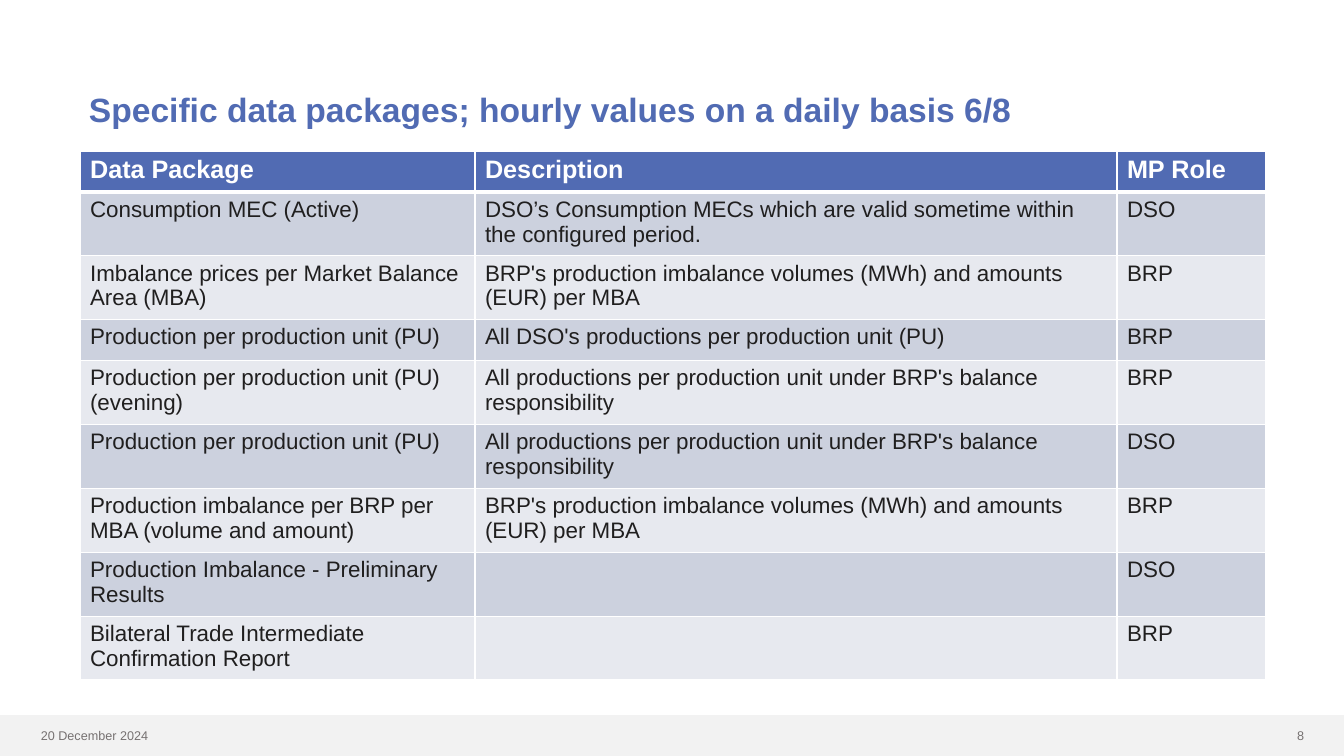
from lxml.etree import SubElement
from pptx import Presentation
from pptx.dml.color import RGBColor
from pptx.enum.shapes import MSO_SHAPE
from pptx.enum.text import MSO_ANCHOR, PP_ALIGN
from pptx.oxml.ns import qn
from pptx.util import Emu, Pt

EMU_PER_PX = 914400 / 100.8
FONT = "Arial"
COLORS = {
    "blue": "516BB3",
    "white": "FFFFFF",
    "ink": "201F1F",
    "band_dark": "CCD1DE",
    "band_light": "E7E9EF",
    "footer_band": "F2F2F2",
    "footer_text": "767171",
}

HEADINGS = ("Data Package", "Description", "MP Role")
PACKAGES = [
    ("Consumption MEC (Active)",
     "DSO’s Consumption MECs which are valid sometime within the configured period.", "DSO"),
    ("Imbalance prices per Market Balance Area (MBA)",
     "BRP's production imbalance volumes (MWh) and amounts (EUR) per MBA", "BRP"),
    ("Production per production unit (PU)",
     "All DSO's productions per production unit (PU)", "BRP"),
    ("Production per production unit (PU) (evening)",
     "All productions per production unit under BRP's balance responsibility", "BRP"),
    ("Production per production unit (PU)",
     "All productions per production unit under BRP's balance responsibility", "DSO"),
    ("Production imbalance per BRP per MBA (volume and amount)",
     "BRP's production imbalance volumes (MWh) and amounts (EUR) per MBA", "BRP"),
    ("Production Imbalance - Preliminary Results", "", "DSO"),
    ("Bilateral Trade Intermediate Confirmation Report", "", "BRP"),
]
COLUMN_WIDTHS = (395, 642, 149)
ROW_HEIGHT = 41


def px(length):
    return Emu(round(length * EMU_PER_PX))


def color(name):
    return RGBColor.from_string(COLORS[name])


def fill_solid(target, name):
    target.fill.solid()
    target.fill.fore_color.rgb = color(name)


def style_font(paragraph, size, color_name, bold=False):
    font = paragraph.font
    font.name, font.size, font.bold = FONT, Pt(size), bold
    font.color.rgb = color(color_name)


def add_text(slide, box, text, size, color_name, bold=False,
             align=PP_ALIGN.LEFT, anchor=MSO_ANCHOR.TOP, spacing=1.0):
    frame = slide.shapes.add_textbox(*map(px, box)).text_frame
    frame.word_wrap = True
    frame.vertical_anchor = anchor
    line = frame.paragraphs[0]
    line.text = text
    line.alignment = align
    line.line_spacing = spacing
    style_font(line, size, color_name, bold)


def add_footer_band(slide):
    band = slide.shapes.add_shape(MSO_SHAPE.RECTANGLE, *map(px, (0, 715, 1344, 41)))
    band.shadow.inherit = False
    fill_solid(band, "footer_band")
    band.line.fill.background()


def set_borders(cell, top, bottom):
    """Draw white cell borders; top and bottom are widths in points."""
    properties = cell._tc.get_or_add_tcPr()
    for side, width in (("L", 1), ("R", 1), ("T", top), ("B", bottom)):
        line = SubElement(properties, qn(f"a:ln{side}"), w=str(Pt(width)))
        solid = SubElement(line, qn("a:solidFill"))
        SubElement(solid, qn("a:srgbClr"), val=COLORS["white"])


def add_package_table(slide):
    rows = [HEADINGS, *PACKAGES]
    size = (sum(COLUMN_WIDTHS), ROW_HEIGHT * len(rows))
    table = slide.shapes.add_table(
        len(rows), len(HEADINGS), *map(px, (80, 151, *size))).table
    for column, width in zip(table.columns, COLUMN_WIDTHS):
        column.width = px(width)
    for index, texts in enumerate(rows):
        table.rows[index].height = px(ROW_HEIGHT)
        is_header = index == 0
        band = "blue" if is_header else ("band_light", "band_dark")[index % 2]
        for cell, text in zip(table.rows[index].cells, texts):
            set_borders(cell, top=3 if index == 1 else 1, bottom=3 if is_header else 1)
            fill_solid(cell, band)
            cell.text = text
            style_font(cell.text_frame.paragraphs[0], 18 if is_header else 16,
                       "white" if is_header else "ink", is_header)


def main():
    deck = Presentation()
    deck.slide_width, deck.slide_height = px(1344), px(756)
    slide = deck.slides.add_slide(deck.slide_layouts[6])
    add_footer_band(slide)
    add_text(slide, (1231, 723, 83, 25), "8", 9, "footer_text", align=PP_ALIGN.RIGHT)
    add_text(slide, (31, 723, 214, 25), "20 December 2024", 9, "footer_text")
    add_text(slide, (79, 39, 1182, 146),
             "Specific data packages; hourly values on a daily basis 6/8",
             24, "blue", bold=True, anchor=MSO_ANCHOR.MIDDLE, spacing=0.9)
    add_package_table(slide)
    deck.save("out.pptx")


if __name__ == "__main__":
    main()
